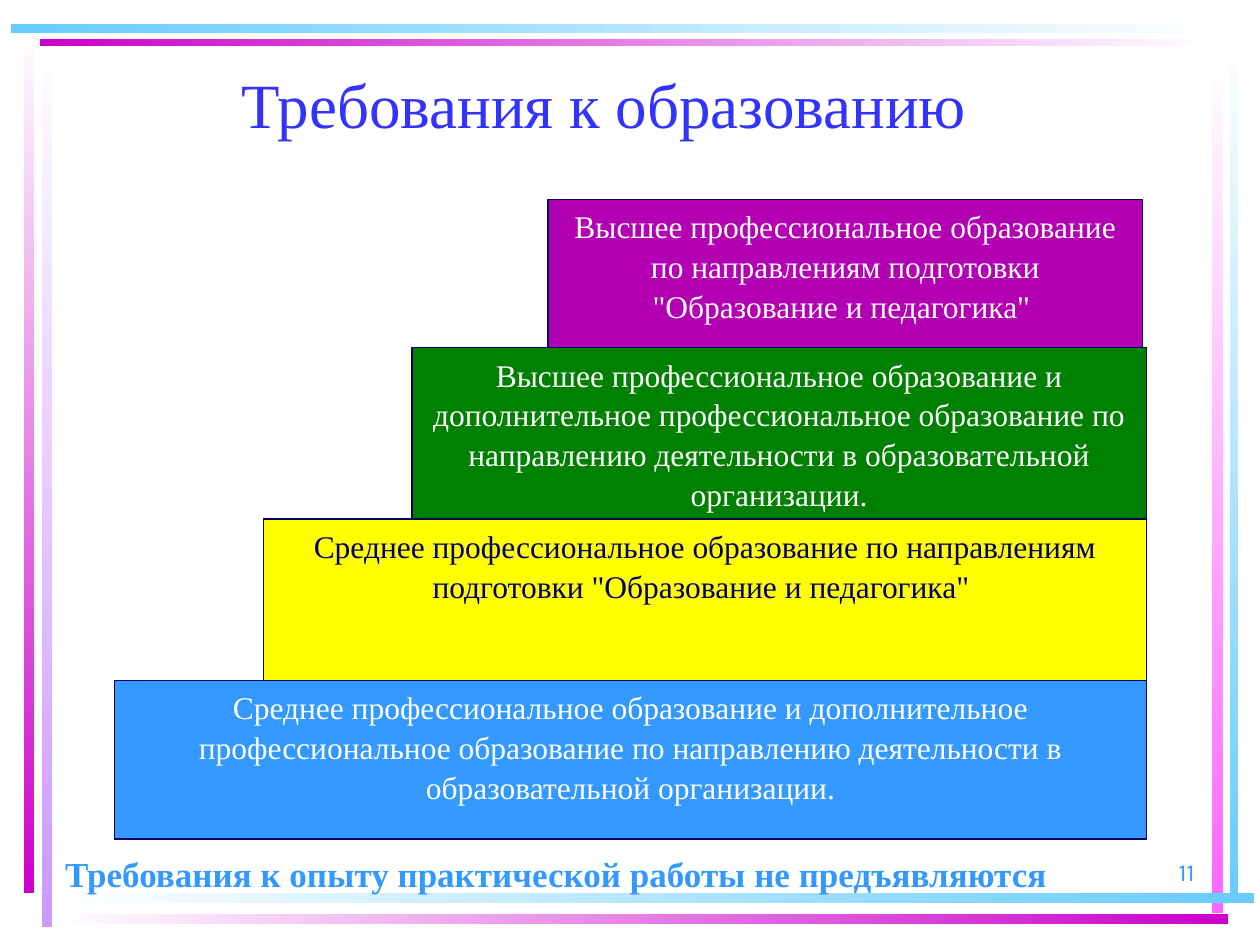
from dataclasses import dataclass
from typing import Any, NamedTuple

from pptx import Presentation
from pptx.dml.color import RGBColor as RGB
from pptx.enum.shapes import MSO_SHAPE as Shape
from pptx.enum.text import MSO_ANCHOR as Anchor, MSO_AUTO_SIZE as Fit, PP_ALIGN as Align
from pptx.util import Pt


@dataclass(frozen=True)
class Theme:
    """Colours, fonts and type sizes of the slide."""

    serif: str = "Times New Roman"
    sans: str = "Karla"
    title: str = "3333FF"
    blue: str = "3399FF"
    navy: str = "000066"
    white: str = "FFFFFF"
    purple: str = "B200B2"
    green: str = "008000"
    yellow: str = "FFFF00"
    sky: str = "66CCFF"
    magenta: str = "CC00CC"
    pink: str = "FF66FF"
    lilac: str = "CC99FF"
    title_size: int = 36
    note_size: int = 20
    step_size: int = 18
    number_size: int = 14


class Box(NamedTuple):
    """Left, top, width and height in points."""

    x: float
    y: float
    w: float
    h: float


class Bar(NamedTuple):
    """A frame bar that fades between two colours."""

    box: Box
    start: str
    end: str


class Step(NamedTuple):
    """One step of the education staircase."""

    box: Box
    fill: str
    ink: str
    text: str


T = Theme()

BARS = [
    Bar(Box(23.8, 20.2, 5.8, 509.8), T.white, T.lilac),
    Bar(Box(13.7, 18, 5.8, 492.5), T.white, T.magenta),
    Bar(Box(702.7, 17.3, 5, 499), T.white, T.sky),
    Bar(Box(692.6, 30.2, 6.5, 491.8), T.white, T.pink),
    Bar(Box(32.4, 510.5, 684, 5.8), T.white, T.sky),
    Bar(Box(32.4, 522, 669.6, 5.8), T.white, T.magenta),
    Bar(Box(23, 22.3, 671, 4.3), T.magenta, T.white),
    Bar(Box(6.1, 13.7, 688.3, 5), T.sky, T.white),
]

TEACHING = 'по направлениям подготовки "Образование и педагогика" '
EXTRA = (
    "и дополнительное профессиональное образование "
    "по направлению деятельности в образовательной организации."
)
HIGHER = "Высшее профессиональное образование"
SECONDARY = "Среднее профессиональное образование"

STEPS = [
    Step(Box(313.2, 113.8, 339.8, 87.1), T.purple, T.white, f"{HIGHER} {TEACHING}"),
    Step(Box(235.4, 198.7, 419.8, 97.9), T.green, T.white, f"{HIGHER} {EXTRA}"),
    Step(Box(150.5, 296.6, 504.7, 92.9), T.yellow, T.navy, f"{SECONDARY} {TEACHING}"),
    Step(Box(65.5, 388.8, 589.7, 90.7), T.blue, T.white, f"{SECONDARY} {EXTRA}"),
]


def apply(obj: Any, **values: Any) -> None:
    """Set each named format value on the object."""
    for name, value in values.items():
        setattr(obj, name, value)


def points(box: Box) -> list[Pt]:
    """Convert a box to lengths."""
    return [Pt(v) for v in box]


def write(sp: Any, text: str, color: str, size: float, font: str = T.serif,
          align: Align = Align.CENTER, anchor: Anchor = Anchor.TOP, bold: bool = False,
          top: float = 3.6, bottom: float = 3.6, spacing: float = 1.0) -> None:
    """Fill a shape with one formatted paragraph."""
    tf = sp.text_frame
    apply(tf, word_wrap=True, auto_size=Fit.NONE, vertical_anchor=anchor,
          margin_left=Pt(7.2), margin_right=Pt(7.2),
          margin_top=Pt(top), margin_bottom=Pt(bottom))
    p = tf.paragraphs[0]
    apply(p, alignment=align, line_spacing=spacing)
    r = p.add_run()
    r.text = text
    apply(r.font, name=font, size=Pt(size), bold=bold)
    r.font.color.rgb = RGB.from_string(color)


def add_rect(s: Any, box: Box) -> Any:
    """Add a rectangle without a shadow."""
    sp = s.shapes.add_shape(Shape.RECTANGLE, *points(box))
    sp.shadow.inherit = False
    return sp


def add_bar(s: Any, bar: Bar) -> None:
    """Add a bar whose gradient runs along its length."""
    sp = add_rect(s, bar.box)
    sp.line.fill.background()
    sp.fill.gradient()
    sp.fill.gradient_angle = 270 if bar.box.h > bar.box.w else 0
    for stop, color in zip(sp.fill.gradient_stops, (bar.start, bar.end)):
        stop.color.rgb = RGB.from_string(color)


def add_step(s: Any, step: Step) -> None:
    """Add one outlined step with its text."""
    sp = add_rect(s, step.box)
    sp.fill.solid()
    sp.fill.fore_color.rgb = RGB.from_string(step.fill)
    sp.line.color.rgb = RGB.from_string(T.navy)
    sp.line.width = Pt(0.75)
    write(sp, step.text, step.ink, T.step_size, spacing=1.05)


def main() -> None:
    """Build and save the slide."""
    prs = Presentation()
    apply(prs, slide_width=Pt(720), slide_height=Pt(540))
    s = prs.slides.add_slide(prs.slide_layouts[5])
    for bar in BARS:
        add_bar(s, bar)

    title = s.shapes.title
    apply(title, **dict(zip(("left", "top", "width", "height"),
                            points(Box(30.2, 30.2, 630, 66.2)))))
    write(title, "Требования к образованию", T.title, T.title_size, top=7.2)

    note = s.shapes.add_textbox(*points(Box(30.2, 473.8, 630.7, 56.9)))
    write(note, "Требования к опыту практической работы не предъявляются", T.blue,
          T.note_size, align=Align.LEFT, anchor=Anchor.BOTTOM, bold=True, bottom=19.6)
    number = s.shapes.add_textbox(*points(Box(540, 473.8, 149.8, 36)))
    write(number, "11", T.blue, T.number_size, T.sans, Align.RIGHT, Anchor.BOTTOM)

    for step in STEPS:
        add_step(s, step)
    prs.save("out.pptx")


if __name__ == "__main__":
    main()
